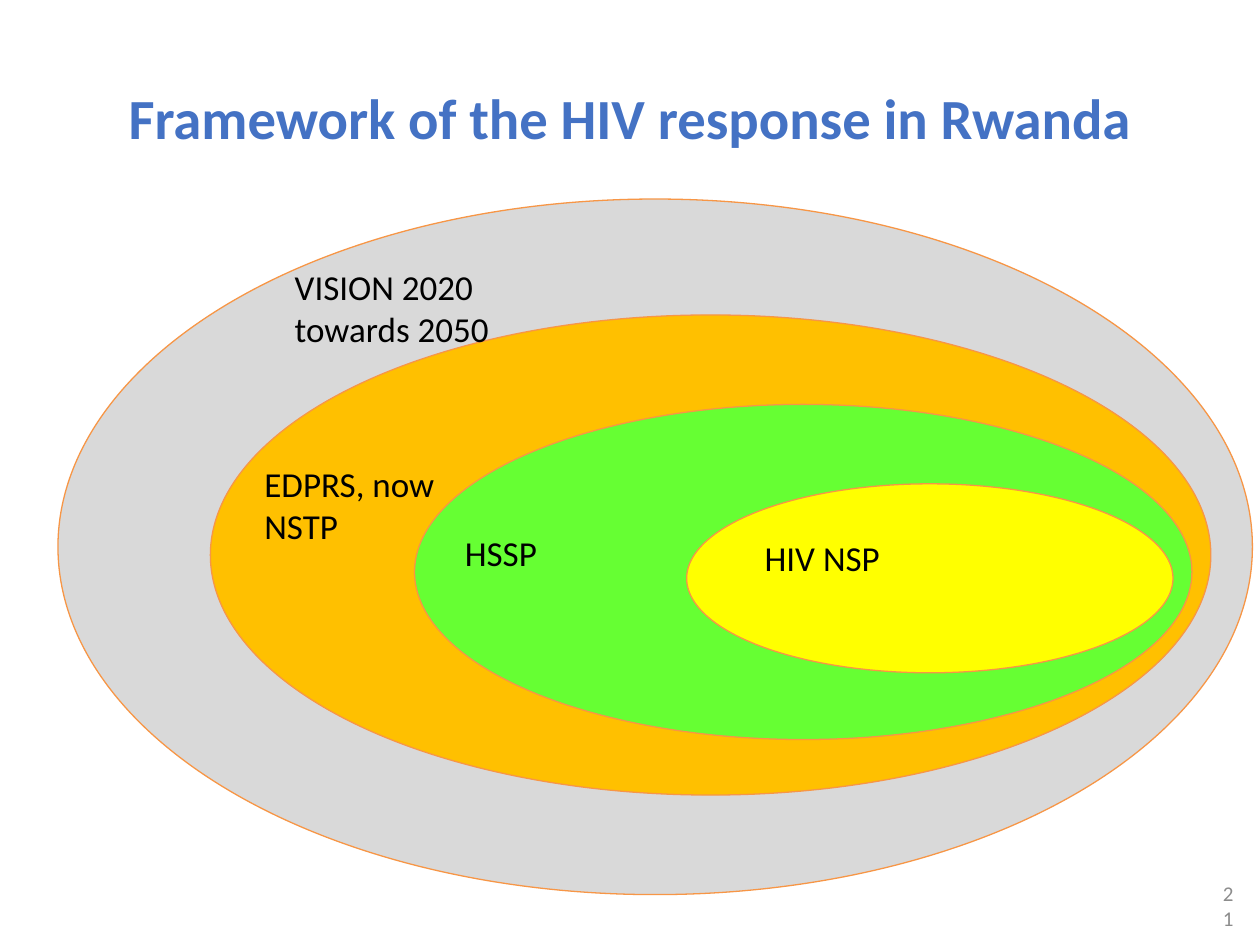
from typing import NamedTuple

from pptx import Presentation
from pptx.dml.color import RGBColor
from pptx.enum import shapes, text
from pptx.util import Inches, Pt

WIDE, HIGH = Inches(10), Inches(7.5)
COLS, ROWS = 100, 75

BLUE = RGBColor(0x44, 0x72, 0xC4)
BLACK = RGBColor(0, 0, 0)
DIM = RGBColor(0x8C, 0x8C, 0x8C)
EDGE = RGBColor(0xF7, 0x96, 0x46)
GREY = RGBColor(0xD9, 0xD9, 0xD9)
AMBER = RGBColor(0xFF, 0xC0, 0x00)
GREEN = RGBColor(0x66, 0xFF, 0x33)
YELLOW = RGBColor(0xFF, 0xFF, 0x00)


class Box(NamedTuple):
    col: float
    row: float
    cols: float
    rows: float

    def place(self) -> tuple[int, int, int, int]:
        return (round(WIDE * self.col / COLS), round(HIGH * self.row / ROWS),
                round(WIDE * self.cols / COLS), round(HIGH * self.rows / ROWS))


class Layer(NamedTuple):
    ring: Box
    fill: RGBColor
    label: str
    spot: Box


LAYERS = [
    Layer(Box(4.6, 15.8, 94.8, 55.2), GREY,
          "VISION 2020 towards 2050", Box(22.4, 20.6, 17.9, 7.7)),
    Layer(Box(16.7, 25, 79.4, 38.1), AMBER,
          "EDPRS, now NSTP", Box(20, 36.2, 17.9, 11.1)),
    Layer(Box(32.9, 32.1, 61.7, 26.6), GREEN,
          "HSSP", Box(35.9, 41.7, 17.9, 4.4)),
    Layer(Box(54.5, 38.4, 38.6, 15), YELLOW,
          "HIV NSP", Box(59.7, 42.1, 34.2, 4.4)),
]


def write(slide, words: str, box: Box, *, size: float = 20,
          color: RGBColor = BLACK, bold: bool = False,
          align=text.PP_ALIGN.LEFT, anchor=text.MSO_ANCHOR.TOP,
          inset: float = 0.1) -> None:
    frame = slide.shapes.add_textbox(*box.place()).text_frame
    frame.word_wrap = True
    frame.vertical_anchor = anchor
    frame.margin_left = frame.margin_right = Inches(inset)
    para = frame.paragraphs[0]
    para.alignment = align
    run = para.add_run()
    run.text = words
    run.font.name = "Calibri"
    run.font.size = Pt(size)
    run.font.bold = bold
    run.font.color.rgb = color


def draw(slide, box: Box, fill: RGBColor) -> None:
    oval = slide.shapes.add_shape(shapes.MSO_SHAPE.OVAL, *box.place())
    oval.shadow.inherit = False
    oval.fill.solid()
    oval.fill.fore_color.rgb = fill
    oval.line.color.rgb = EDGE
    oval.line.width = Pt(0.75)


def main() -> None:
    deck = Presentation()
    deck.slide_width, deck.slide_height = WIDE, HIGH
    slide = deck.slides.add_slide(deck.slide_layouts[6])
    write(slide, "Framework of the HIV response in Rwanda", Box(5, 3, 90, 12.5),
          size=32.4, color=BLUE, bold=True, align=text.PP_ALIGN.CENTER,
          anchor=text.MSO_ANCHOR.MIDDLE)
    write(slide, "21", Box(96.1, 71, 2.3, 1.7), size=12, color=DIM,
          align=text.PP_ALIGN.RIGHT, anchor=text.MSO_ANCHOR.MIDDLE, inset=0.05)
    for layer in LAYERS:
        draw(slide, layer.ring, layer.fill)
    for layer in LAYERS:
        write(slide, layer.label, layer.spot)
    deck.save("out.pptx")


if __name__ == "__main__":
    main()
